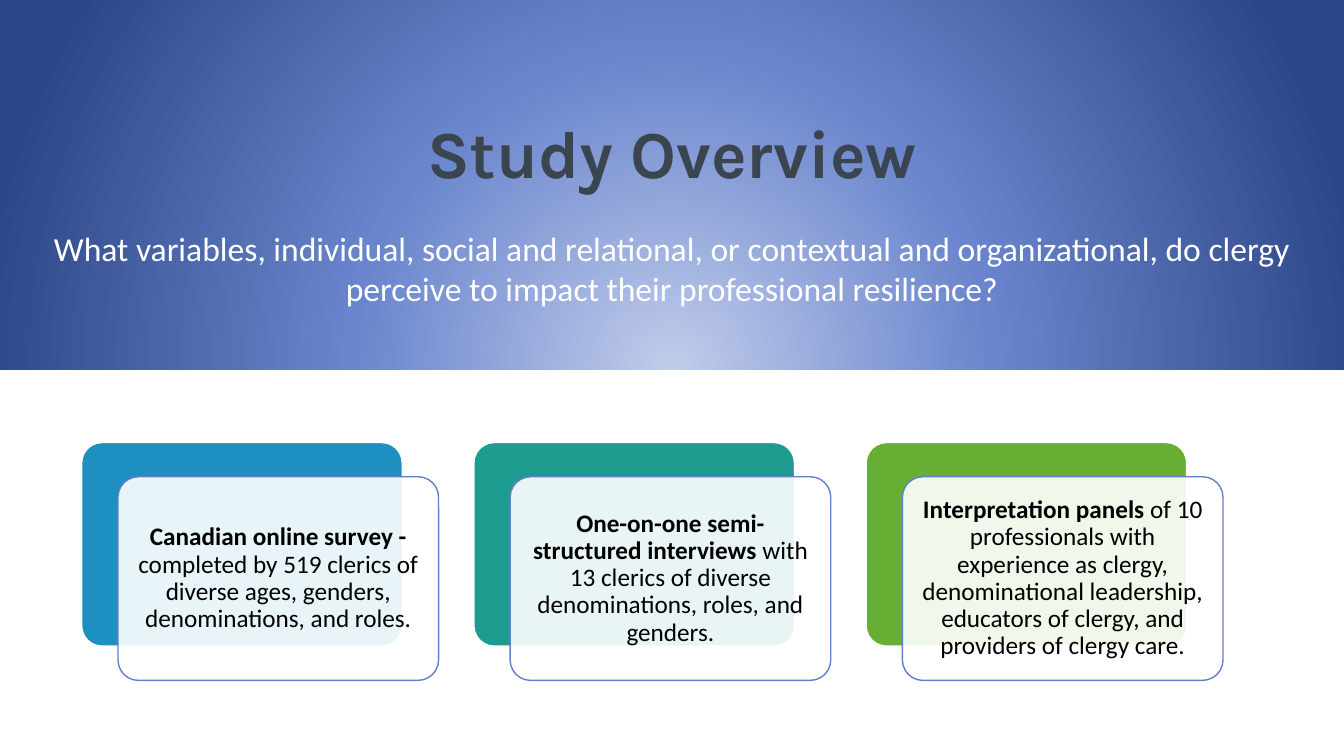
from lxml.etree import SubElement
from pptx import Presentation
from pptx.dml.color import RGBColor
from pptx.enum.shapes import MSO_SHAPE
from pptx.enum.text import MSO_ANCHOR, MSO_AUTO_SIZE, PP_ALIGN
from pptx.oxml import parse_xml
from pptx.oxml.ns import nsdecls, qn
from pptx.util import Inches, Pt

WIDE, HIGH = 13.33, 7.5
STOPS = [(0, "C0CCEA"), (46, "6A85CD"), (100, "2D4687")]
CARDS = [
    ("1D8FC1", "Canadian online survey - ",
     "completed by 519 clerics of diverse ages, genders, denominations, and roles."),
    ("1E9C90", "One-on-one semi-structured interviews ",
     "with 13 clerics of diverse denominations, roles, and genders."),
    ("66AF34", "Interpretation panels ",
     "of 10 professionals with experience as clergy, denominational leadership, "
     "educators of clergy, and providers of clergy care."),
]


def color(code):
    return RGBColor.from_string(code)


def place(shape, left, top, width, height):
    shape.left, shape.top = Inches(left), Inches(top)
    shape.width, shape.height = Inches(width), Inches(height)


def write(shape, runs, size, font, code, inset, space=1.0):
    frame = shape.text_frame
    frame.auto_size = MSO_AUTO_SIZE.NONE
    frame.word_wrap = True
    frame.vertical_anchor = MSO_ANCHOR.MIDDLE
    frame.margin_left = frame.margin_right = Inches(inset)
    frame.margin_top = frame.margin_bottom = Inches(inset)
    para = frame.paragraphs[0]
    para.alignment = PP_ALIGN.CENTER
    para.line_spacing = space
    for text, bold in runs:
        run = para.add_run()
        run.text = text
        run.font.size = Pt(size)
        run.font.name = font
        run.font.bold = bold
        run.font.color.rgb = color(code)


def glow(shape):
    stops = "".join(
        f'<a:gs pos="{spot * 1000}"><a:srgbClr val="{code}"/></a:gs>'
        for spot, code in STOPS)
    fill = parse_xml(
        f'<a:gradFill {nsdecls("a")} rotWithShape="1"><a:gsLst>{stops}</a:gsLst>'
        '<a:path path="circle"><a:fillToRect l="50000" t="130000" r="50000" '
        'b="-30000"/></a:path></a:gradFill>')
    shape.fill.background()
    props = shape._element.spPr
    props.replace(props.find(qn("a:noFill")), fill)


def header(slide, left, top, width, height):
    band = slide.shapes.add_shape(
        MSO_SHAPE.RECTANGLE, Inches(left), Inches(top), Inches(width), Inches(height))
    band.shadow.inherit = False
    band.line.fill.background()
    glow(band)
    title = slide.shapes.title
    band._element.addnext(title._element)
    place(title, left, top + 1, width, 1)
    write(title, [("Study Overview", True)], 48, "Karla", "3B4550", 0.1)
    query = slide.shapes.add_textbox(0, 0, 0, 0)
    place(query, left, top + 2.16, width, 1)
    write(query, [("What variables, individual, social and relational, or contextual "
                   "and organizational, do clergy perceive to impact their "
                   "professional resilience?", False)], 24, "Calibri", "FFFFFF", 0.1)


def panel(slide, left, top, width, height, fill, line):
    shape = slide.shapes.add_shape(
        MSO_SHAPE.ROUNDED_RECTANGLE,
        Inches(left), Inches(top), Inches(width), Inches(height))
    shape.adjustments[0] = 0.1
    shape.shadow.inherit = False
    shape.fill.solid()
    shape.fill.fore_color.rgb = color(fill)
    shape.line.color.rgb = color(line)
    shape.line.width = Pt(1)
    return shape


def card(slide, left, top, width, height, tint, lead, rest):
    panel(slide, left, top, width, height, tint, "FFFFFF")
    front = panel(slide, left + 0.36, top + 0.34, width, height, "FFFFFF", "627FCA")
    tone = front._element.spPr.find(qn("a:solidFill")).find(qn("a:srgbClr"))
    SubElement(tone, qn("a:alpha")).set("val", "90000")
    write(front, [(lead, True), (rest, False)], 18, "Calibri", "000000", 0.07, 0.9)


def main():
    deck = Presentation()
    deck.slide_width, deck.slide_height = Inches(WIDE), Inches(HIGH)
    slide = deck.slides.add_slide(deck.slide_layouts[5])
    header(slide, 0, 0, WIDE, 3.67)
    for index, (tint, lead, rest) in enumerate(CARDS):
        card(slide, 0.81 + 3.89 * index, 4.39, 3.18, 2.02, tint, lead, rest)
    deck.save("out.pptx")


if __name__ == "__main__":
    main()
